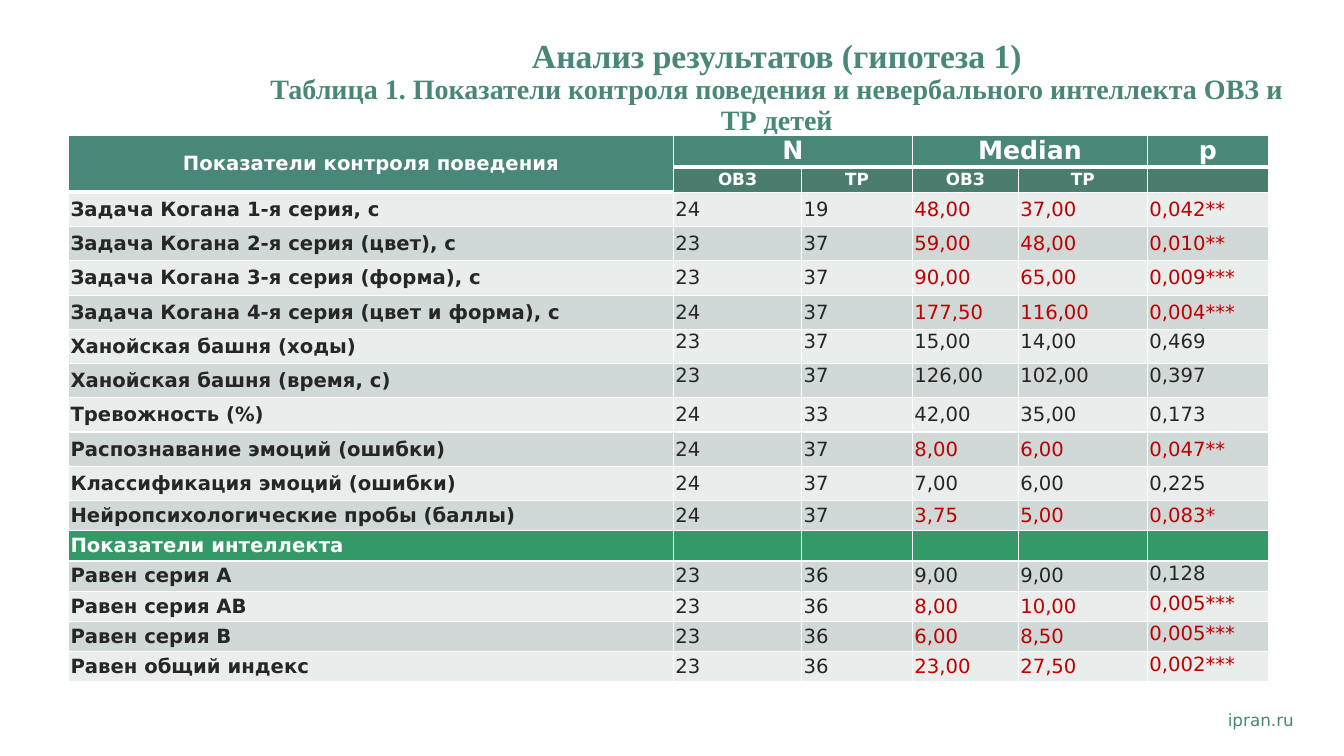
from dataclasses import dataclass

from lxml.etree import SubElement
from pptx import Presentation
from pptx.dml.color import RGBColor
from pptx.enum.text import MSO_ANCHOR, MSO_AUTO_SIZE, PP_ALIGN
from pptx.oxml.ns import qn
from pptx.util import Inches, Pt


@dataclass(frozen=True)
class Theme:
    sans: str = "DejaVu Sans"
    serif: str = "Times New Roman"
    green: str = "498779"
    dark_green: str = "4B7D6E"
    section: str = "339966"
    light: str = "E9EDEC"
    band: str = "D0D9D7"
    white: str = "FFFFFF"
    text: str = "262626"
    red: str = "C00000"
    title: int = 24
    subtitle: int = 20
    header: int = 18
    body: int = 14
    small: int = 12


theme = Theme()


def set_font(font, name, size, color, bold=False):
    font.name = name
    font.size = Pt(size)
    font.bold = bold
    font.color.rgb = RGBColor.from_string(color)


def fill_cell(cell, text, fill, size, color, bold, alignment, anchor, bottom_width):
    cell.margin_left = cell.margin_right = Inches(0.02)
    cell.margin_top = cell.margin_bottom = Inches(0.01)
    cell.vertical_anchor = anchor
    properties = cell._tc.get_or_add_tcPr()
    for side, width in (("lnL", 1), ("lnR", 1), ("lnT", 1), ("lnB", bottom_width)):
        line = SubElement(properties, qn(f"a:{side}"), w=str(Pt(width)))
        solid = SubElement(line, qn("a:solidFill"))
        SubElement(solid, qn("a:srgbClr"), val=theme.white)
    cell.fill.solid()
    cell.fill.fore_color.rgb = RGBColor.from_string(fill)
    paragraph = cell.text_frame.paragraphs[0]
    paragraph.alignment = alignment
    set_font(paragraph.font, theme.sans, size, color, bold)
    if text:
        paragraph.add_run().text = text
    else:
        SubElement(paragraph._p, qn("a:endParaRPr"), sz=str(size * 100))


presentation = Presentation()
presentation.slide_width = Inches(13.33)
presentation.slide_height = Inches(7.5)
slide = presentation.slides.add_slide(presentation.slide_layouts[5])

title = slide.shapes.title
title.left, title.top = Inches(2.53), Inches(0.34)
title.width, title.height = Inches(10.35), Inches(0.56)
title_frame = title.text_frame
title_frame.auto_size = MSO_AUTO_SIZE.NONE
title_frame.word_wrap = True
title_frame.vertical_anchor = MSO_ANCHOR.TOP
paragraph = title_frame.paragraphs[0]
paragraph.alignment = PP_ALIGN.CENTER
paragraph.line_spacing = 0.9
set_font(paragraph.font, theme.serif, theme.title, theme.green, True)
paragraph.add_run().text = "Анализ результатов (гипотеза 1)"
paragraph.add_line_break()
subtitle = paragraph.add_run()
subtitle.text = "Таблица 1. Показатели контроля поведения и невербального интеллекта ОВЗ и ТР детей"
subtitle.font.size = Pt(theme.subtitle)

headers = [
    ["Показатели контроля поведения", "N", "", "Median", "", "p"],
    ["", "ОВЗ", "ТР", "ОВЗ", "ТР", ""],
]
behaviour = [
    ["Задача Когана 1-я серия, с", "24", "19", "48,00", "37,00", "0,042**"],
    ["Задача Когана 2-я серия (цвет), с", "23", "37", "59,00", "48,00", "0,010**"],
    ["Задача Когана 3-я серия (форма), с", "23", "37", "90,00", "65,00", "0,009***"],
    ["Задача Когана 4-я серия (цвет и форма), с", "24", "37", "177,50", "116,00", "0,004***"],
    ["Ханойская башня (ходы)", "23", "37", "15,00", "14,00", "0,469"],
    ["Ханойская башня (время, с)", "23", "37", "126,00", "102,00", "0,397"],
    ["Тревожность (%)", "24", "33", "42,00", "35,00", "0,173"],
    ["Распознавание эмоций (ошибки)", "24", "37", "8,00", "6,00", "0,047**"],
    ["Классификация эмоций (ошибки)", "24", "37", "7,00", "6,00", "0,225"],
    ["Нейропсихологические пробы (баллы)", "24", "37", "3,75", "5,00", "0,083*"],
]
section = ["Показатели интеллекта", "", "", "", "", ""]
intellect = [
    ["Равен серия А", "23", "36", "9,00", "9,00", "0,128"],
    ["Равен серия АВ", "23", "36", "8,00", "10,00", "0,005***"],
    ["Равен серия В", "23", "36", "6,00", "8,50", "0,005***"],
    ["Равен общий индекс", "23", "36", "23,00", "27,50", "0,002***"],
]
rows = headers + behaviour + [section] + intellect
column_widths = [6, 1.27, 1.1, 1.05, 1.28, 1.2]
row_heights = [0.32, 0.22] + [0.34] * 9 + [0.3] * 6

table = slide.shapes.add_table(
    len(rows), len(column_widths), Inches(0.68), Inches(1.34), Inches(11.9), Inches(5.4)
).table
table.first_row = table.horz_banding = False
for column, width in zip(table.columns, column_widths):
    column.width = Inches(width)
for row, height in zip(table.rows, row_heights):
    row.height = Inches(height)

for row_index, values in enumerate(rows):
    is_header = row_index < len(headers)
    for column_index, value in enumerate(values):
        is_label = column_index == 0
        size, color = theme.body, theme.text
        alignment, anchor = PP_ALIGN.LEFT, MSO_ANCHOR.MIDDLE
        if is_header:
            fill = theme.green if row_index == 0 or is_label else theme.dark_green
            color, alignment = theme.white, PP_ALIGN.CENTER
            if value and not is_label:
                size = theme.header if row_index == 0 else theme.small
        elif values is section:
            fill, color = theme.section, theme.white
        else:
            fill = theme.band if row_index % 2 else theme.light
            if column_index > 2 and values[-1].endswith("*"):
                color = theme.red
            top_numbers = values[0].startswith("Ханойская") and not is_label
            if top_numbers or values in intellect and column_index == 5:
                anchor = MSO_ANCHOR.TOP
        thick = row_index == 0 or is_header and is_label
        fill_cell(
            table.cell(row_index, column_index), value, fill, size, color,
            is_header or is_label, alignment, anchor, 3 if thick else 1,
        )

table.cell(0, 0).merge(table.cell(1, 0))
for first_column in (1, 3):
    table.cell(0, first_column).merge(table.cell(0, first_column + 1))

site = slide.shapes.add_textbox(Inches(12.08), Inches(6.99), Inches(1.04), Inches(0.3))
site.text_frame.word_wrap = True
site.text_frame.text = "ipran.ru"
set_font(site.text_frame.paragraphs[0].font, theme.sans, theme.small, theme.green)

presentation.save("out.pptx")
